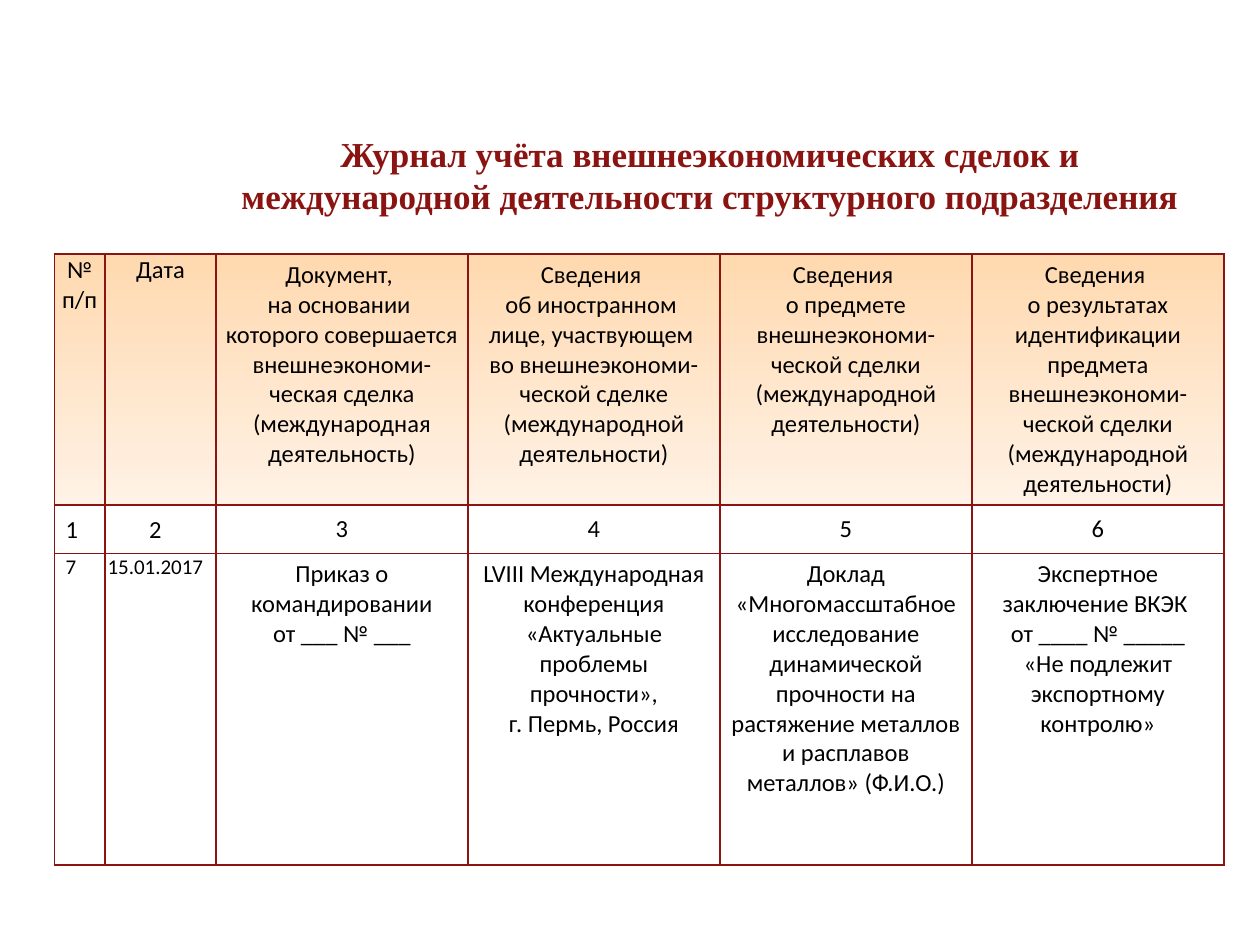
"""Builds a slide with a register of foreign economic transactions."""
import pptx
import pptx.dml.color
import pptx.enum.text
import pptx.oxml
import pptx.oxml.ns
import pptx.util

Pt = pptx.util.Pt
RGB = pptx.dml.color.RGBColor
ALIGN = pptx.enum.text.PP_ALIGN
ANCHOR = pptx.enum.text.MSO_ANCHOR

RED = RGB(0x8A, 0x14, 0x11)
BLACK = RGB(0, 0, 0)
PEACH = RGB(0xFF, 0xD9, 0xAF)
CREAM = RGB(0xFF, 0xF2, 0xE6)

TITLE = ("Журнал учёта внешнеэкономических сделок и "
         "международной деятельности структурного подразделения")
HEAD = [
    "№\nп/п",
    "Дата",
    "Документ, \nна основании \nкоторого совершается внешнеэкономи-ческая сделка "
    "(международная деятельность)",
    "Сведения \nоб иностранном \nлице, участвующем \nво внешнеэкономи-ческой сделке "
    "(международной деятельности)",
    "Сведения \nо предмете внешнеэкономи-ческой сделки (международной деятельности)",
    "Сведения \nо результатах идентификации предмета внешнеэкономи-ческой сделки "
    "(международной деятельности)",
]
NUMS = ["1", "2", "3", "4", "5", "6"]
ENTRY = [
    "7",
    "15.01.2017",
    "Приказ о командировании\nот ___ № ___",
    "LVIII Международная конференция «Актуальные проблемы прочности»,\nг. Пермь, Россия",
    "Доклад «Многомассштабное исследование динамической прочности на растяжение "
    "металлов и расплавов металлов» (Ф.И.О.)",
    "Экспертное заключение ВКЭК \nот ____ № _____\n«Не подлежит экспортному контролю»",
]
ROWS = [HEAD, NUMS, ENTRY]
WIDTHS = [29, 63.4, 144, 144, 144, 144]
HEIGHTS = [143.5, 27.5, 178]


def set_text(frame, text, font, size, color, align, bold=False):
    frame.text = text
    for para in frame.paragraphs:
        para.alignment = align
        for run in para.runs:
            run.font.name = font
            run.font.size = Pt(size)
            run.font.bold = bold
            run.font.color.rgb = color


def set_pads(box, left, top, right, low):
    box.margin_left, box.margin_top = Pt(left), Pt(top)
    box.margin_right, box.margin_bottom = Pt(right), Pt(low)


def add_lines(cell):
    props = cell._tc.get_or_add_tcPr()
    for spot, side in enumerate(("lnL", "lnR", "lnT", "lnB")):
        props.insert(spot, pptx.oxml.parse_xml(
            f'<a:{side} {pptx.oxml.ns.nsdecls("a")} w="{Pt(1)}"><a:solidFill>'
            f'<a:srgbClr val="{RED}"/></a:solidFill></a:{side}>'))


def fill_cell(cell, text, row, col):
    plain = col == 0 and row > 0
    size = 12 if row == 2 and col < 2 else 14
    set_text(cell.text_frame, text, "Calibri", size, BLACK,
             ALIGN.LEFT if plain else ALIGN.CENTER)
    if col > 1:
        set_pads(cell, 3.6, 3.6, 3.6, 3.6)
    else:
        set_pads(cell, 6.5 if plain else 0.7, 0.7,
                 6.5 if row and col else 0.7, 0)
    cell.vertical_anchor = ANCHOR.MIDDLE if row == 1 else ANCHOR.TOP
    if row == 0:
        cell.fill.gradient()
        cell.fill.gradient_angle = 270
        for stop, color in zip(cell.fill.gradient_stops, (PEACH, CREAM)):
            stop.color.rgb = color
    else:
        cell.fill.background()
    add_lines(cell)


def main():
    deck = pptx.Presentation()
    deck.slide_width, deck.slide_height = Pt(720), Pt(540)
    slide = deck.slides.add_slide(deck.slide_layouts[5])

    title = slide.shapes.title
    title.left, title.top = Pt(121.7), Pt(54.7)
    title.width, title.height = Pt(568), Pt(90)
    frame = title.text_frame
    set_text(frame, TITLE, "Times New Roman", 20, RED, ALIGN.CENTER, True)
    set_pads(frame, 3.6, 3.6, 3.6, 3.6)
    frame.auto_size = pptx.enum.text.MSO_AUTO_SIZE.NONE
    frame.vertical_anchor = ANCHOR.MIDDLE

    table = slide.shapes.add_table(
        len(ROWS), len(WIDTHS), Pt(31), Pt(145.2),
        Pt(sum(WIDTHS)), Pt(sum(HEIGHTS))).table
    table.first_row = table.horz_banding = False
    for column, width in zip(table.columns, WIDTHS):
        column.width = Pt(width)
    for row, texts in enumerate(ROWS):
        table.rows[row].height = Pt(HEIGHTS[row])
        for col, text in enumerate(texts):
            fill_cell(table.cell(row, col), text, row, col)

    deck.save("out.pptx")


if __name__ == "__main__":
    main()
